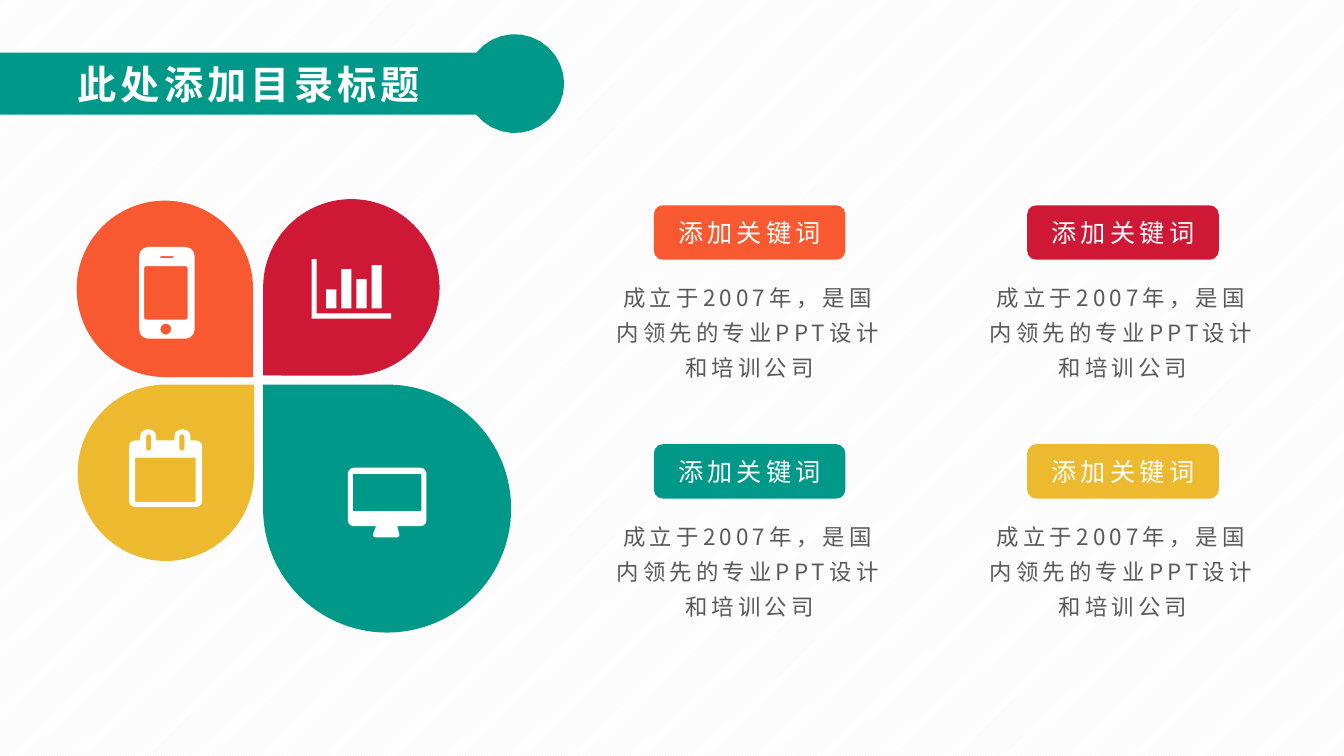
import math

import pptx
import pptx.dml.color
import pptx.enum.dml
import pptx.enum.shapes
import pptx.enum.text
import pptx.oxml.ns
import pptx.util

RGB = pptx.dml.color.RGBColor
TEAL = RGB(0x00, 0x99, 0x89)
RED = RGB(0xCE, 0x18, 0x36)
GOLD = RGB(0xED, 0xB9, 0x2E)
CORAL = RGB(0xF8, 0x59, 0x31)
WHITE = RGB(0xFF, 0xFF, 0xFF)
PALE = RGB(0xF2, 0xF2, 0xF2)
GREY = RGB(0x59, 0x59, 0x59)

KIND = pptx.enum.shapes.MSO_SHAPE
ALIGN = pptx.enum.text.PP_ALIGN
FACE = "Noto Sans CJK SC"
CELL = pptx.util.Inches(0.1)
FINE = 100


def write(frame, text, size=18, color=WHITE, bold=False, align=ALIGN.CENTER, lead=None):
    frame.word_wrap = True
    line = frame.paragraphs[0]
    line.alignment = align
    line.line_spacing = lead
    run = line.add_run()
    run.text = text
    font = run.font
    font.size = pptx.util.Pt(size)
    font.bold = bold
    font.color.rgb = color
    font.name = FACE
    props = run._r.get_or_add_rPr()
    props.set("spc", "300")
    east = props.makeelement(pptx.oxml.ns.qn("a:ea"), {"typeface": FACE})
    props.append(east)


def toward(start, end, length):
    span = math.dist(start, end)
    return tuple(s + (e - s) * length / span for s, e in zip(start, end))


def bend(before, point, after, radius, steps=3):
    if not radius:
        return [point]
    first, last = toward(point, before, radius), toward(point, after, radius)
    near, far = toward(point, first, radius * 0.45), toward(point, last, radius * 0.45)
    curve = []
    for step in range(steps + 1):
        t = step / steps
        u = 1 - t
        curve.append(tuple(
            u**3 * a + 3 * u * u * t * b + 3 * u * t * t * c + t**3 * d
            for a, b, c, d in zip(first, near, far, last)))
    return curve


def outline(corners):
    dots = [corner[:2] for corner in corners]
    curve = []
    for i, (x, y, radius) in enumerate(corners):
        curve += bend(dots[i - 1], (x, y), dots[(i + 1) % len(dots)], radius)
    return curve


def box(x, y, wide, high, radius=0):
    return outline([(x, y, radius), (x + wide, y, radius),
                    (x + wide, y + high, radius), (x, y + high, radius)])


class Board:
    def __init__(self, deck):
        deck.slide_width = pptx.util.Inches(13.33)
        deck.slide_height = pptx.util.Inches(7.5)
        self.slide = deck.slides.add_slide(deck.slide_layouts[6])
        self.shapes = self.slide.shapes

    def back(self):
        fill = self.slide.background.fill
        fill.patterned()
        fill.pattern = pptx.enum.dml.MSO_PATTERN.LIGHT_UPWARD_DIAGONAL
        fill.fore_color.rgb = PALE
        fill.back_color.rgb = WHITE

    def group(self):
        self.shapes = self.slide.shapes.add_group_shape().shapes

    def top(self):
        self.shapes = self.slide.shapes

    def paint(self, shape, color):
        shape.shadow.inherit = False
        shape.fill.solid()
        shape.fill.fore_color.rgb = color
        shape.line.fill.background()
        return shape

    def place(self, spot):
        return [round(length * CELL) for length in spot]

    def shape(self, kind, spot, color, turn=0):
        shape = self.paint(self.shapes.add_shape(kind, *self.place(spot)), color)
        shape.rotation = turn
        return shape

    def pill(self, spot, color, text):
        frame = self.shape(KIND.ROUNDED_RECTANGLE, spot, color).text_frame
        frame.vertical_anchor = pptx.enum.text.MSO_ANCHOR.MIDDLE
        write(frame, text)

    def text(self, spot, text, **style):
        frame = self.shapes.add_textbox(*self.place(spot)).text_frame
        write(frame, text, **style)
        frame.auto_size = pptx.enum.text.MSO_AUTO_SIZE.SHAPE_TO_FIT_TEXT

    def form(self, rings, color):
        pen = None
        for ring in rings:
            dots = [(x * FINE, y * FINE) for x, y in ring]
            if pen is None:
                pen = self.shapes.build_freeform(*dots[0], scale=CELL / FINE)
            else:
                pen.move_to(*dots[0])
            pen.add_line_segments(dots[1:], close=True)
        self.paint(pen.convert_to_shape(), color)


def petals(board):
    board.group()
    for x, y, size, color, turn in [
            (26.1, 38.15, 24.6, TEAL, 270), (26.1, 19.75, 17.5, RED, 180),
            (7.7, 38.15, 17.5, GOLD, 0), (7.6, 19.9, 17.5, CORAL, 90)]:
        board.shape(KIND.TEAR, (x, y, size, size), color, turn)

    tabs = []
    for x in (13.9, 17.3):
        tabs += [(x, 43.7, 0), (x, 42.6, 0.7), (x + 1.6, 42.6, 0.7), (x + 1.6, 43.7, 0)]
    diary = outline([(12.8, 43.7, 0.6), *tabs, (20.05, 43.7, 0.6),
                     (20.05, 50.3, 0.6), (12.8, 50.3, 0.6)])
    slots = [box(x, 43.1, 0.5, 1.6, 0.2) for x in (14.5, 17.8)]
    board.form([diary, box(13.4, 45.4, 6, 4.4), *slots], WHITE)

    screen = outline([(34.5, 46.4, 0.6), (42.3, 46.4, 0.6), (42.3, 52.2, 0.6),
                      (39.4, 52.2, 0), (39.6, 53, 0), (39.6, 53.3, 0.2),
                      (37, 53.3, 0.2), (37, 53, 0), (37.3, 52.2, 0), (34.5, 52.2, 0.6)])
    board.form([screen, box(35, 47, 6.8, 3.7, 0.1)], WHITE)

    axes = [(30.9, 25.7), (31.4, 25.7), (31.4, 31.1), (38.8, 31.1), (38.8, 31.6), (30.9, 31.6)]
    bars = [box(32.35 + 1.5 * i, 30.6 - high, 1, high)
            for i, high in enumerate((1.9, 3.9, 2.9, 4.3))]
    board.form([axes, *bars], WHITE)

    board.form([box(13.8, 24.5, 5.5, 9.1, 0.9), box(14.3, 26.4, 4.3, 5.3, 0.2),
                box(15.9, 25.4, 1.3, 0.2), box(15.9, 32.1, 1.1, 1.1, 0.55)], WHITE)


def cards(board):
    for col, row, color in [(0, 0, CORAL), (1, 0, RED), (1, 1, GOLD), (0, 1, TEAL)]:
        x, y = 64.85 + 37.03 * col, 20.37 + 23.7 * row
        board.group()
        board.pill((x, y, 19, 5.4), color, "添加关键词")
        board.text((x - 5.05, y + 6.53, 29.1, 11.4),
                   "成立于2007年，是国内领先的专业PPT设计和培训公司",
                   size=16, color=GREY, lead=1.3)


def title(board):
    board.top()
    radius, half = 4.9, 3.08
    edge = math.pi - math.asin(half / radius)
    disc = []
    for step in range(-12, 13):
        turn = edge * step / 12
        disc.append((51.05 + radius * math.cos(turn), 8.3 + radius * math.sin(turn)))
    board.form([[(0, 8.3 - half), *disc, (0, 8.3 + half)]], TEAL)
    board.text((6.7, 5.5, 39.3, 5.7), "此处添加目录标题", size=28, bold=True, align=ALIGN.LEFT)


def main():
    deck = pptx.Presentation()
    board = Board(deck)
    board.back()
    petals(board)
    cards(board)
    title(board)
    deck.save("out.pptx")


if __name__ == "__main__":
    main()
